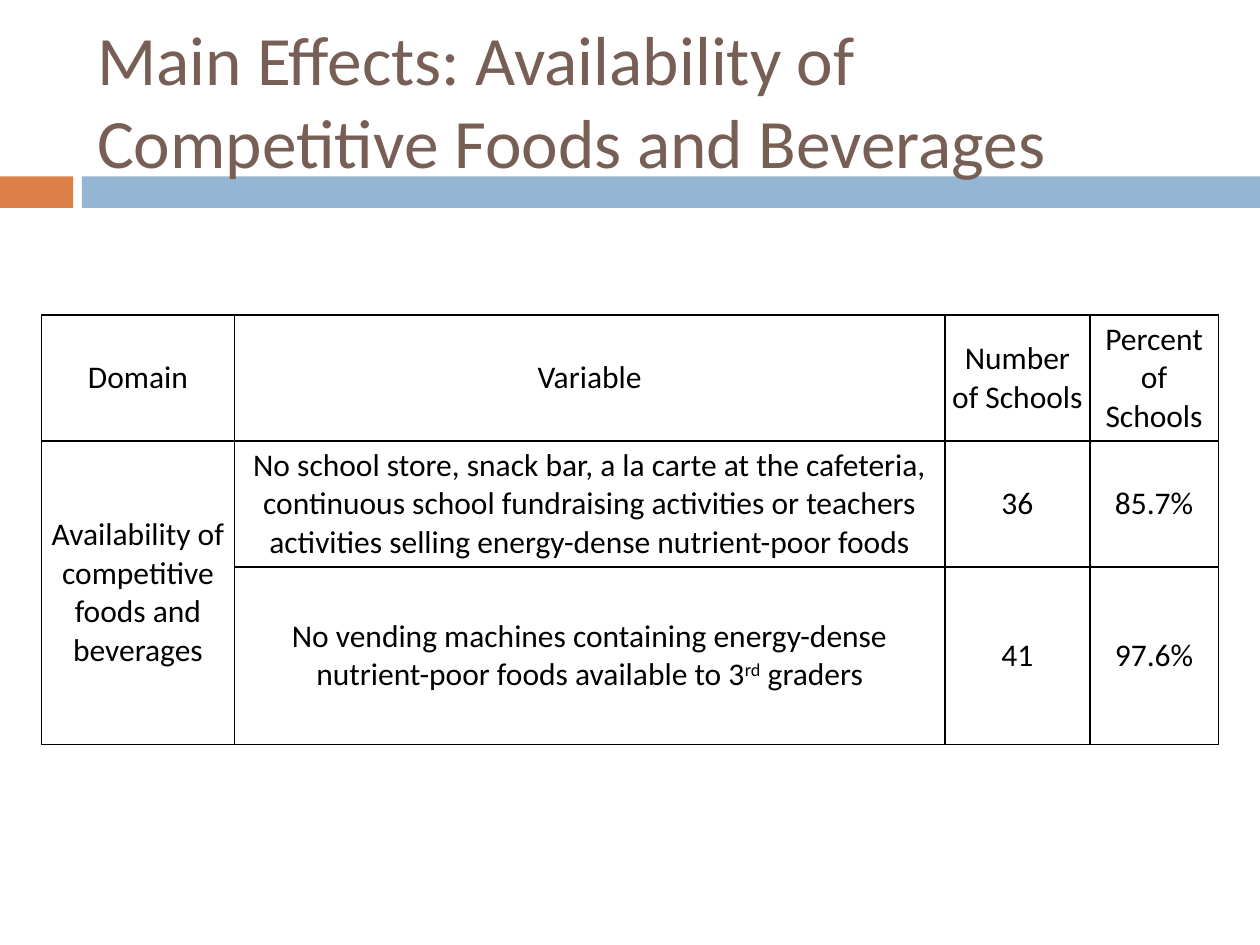
from pptx import Presentation
from pptx.dml.color import RGBColor
from pptx.enum.shapes import MSO_SHAPE
from pptx.enum.text import MSO_ANCHOR, MSO_AUTO_SIZE, PP_ALIGN
from pptx.oxml import parse_xml
from pptx.oxml.ns import nsdecls
from pptx.util import Inches, Pt

HEADS = ["Domain", "Variable", "Number of Schools", "Percent of Schools"]
ROWS = [
    ["Availability of competitive foods and beverages",
     "No school store, snack bar, a la carte at the cafeteria, continuous "
     "school fundraising activities or teachers activities selling "
     "energy-dense nutrient-poor foods", "36", "85.7%"],
    ["", "No vending machines containing energy-dense nutrient-poor foods "
     "available to 3^rd^ graders", "41", "97.6%"],
]
WIDTHS = [1.53, 5.64, 1.15, 1.02]
HEIGHTS = [1, 1, 1.41]


def color(code):
    return RGBColor.from_string(code)


class Deck:
    """Holds the style and the current slide."""

    face = "Calibri"
    ink = "000000"

    def __init__(self, slide):
        self.slide = slide

    def style(self, para, size, code, align):
        para.alignment = align
        para.font.name = self.face
        para.font.size = Pt(size)
        para.font.color.rgb = color(code)

    def bar(self, left, width, code):
        shape = self.slide.shapes.add_shape(
            MSO_SHAPE.RECTANGLE, Inches(left), Inches(1.4),
            Inches(width), Inches(0.25))
        shape.shadow.inherit = False
        shape.fill.solid()
        shape.fill.fore_color.rgb = color(code)
        shape.line.fill.background()

    def title(self, text):
        shape = self.slide.shapes.title
        shape.left, shape.top = Inches(0.67), Inches(0.25)
        shape.width, shape.height = Inches(8.92), Inches(1.08)
        frame = shape.text_frame
        frame.text = text
        frame.word_wrap = True
        frame.auto_size = MSO_AUTO_SIZE.NONE
        frame.vertical_anchor = MSO_ANCHOR.MIDDLE
        self.style(frame.paragraphs[0], 39.6, "775F55", PP_ALIGN.LEFT)
        shape.element.getparent().append(shape.element)

    def border(self, cell):
        props = cell._tc.get_or_add_tcPr()
        for side in "LRTB":
            props.append(parse_xml(
                f'<a:ln{side} {nsdecls("a")} w="{Pt(1)}"><a:solidFill>'
                f'<a:srgbClr val="{self.ink}"/></a:solidFill></a:ln{side}>'))

    def cell(self, cell, text):
        self.border(cell)
        cell.fill.background()
        cell.vertical_anchor = MSO_ANCHOR.MIDDLE
        cell.margin_left = cell.margin_right = Inches(0.05)
        cell.margin_top = cell.margin_bottom = 0
        para = cell.text_frame.paragraphs[0]
        for i, part in enumerate(text.split("^")):
            run = para.add_run()
            run.text = part
            if i % 2:
                run._r.get_or_add_rPr().set("baseline", "30000")
        self.style(para, 18, self.ink, PP_ALIGN.CENTER)

    def table(self, left, top, rows):
        table = self.slide.shapes.add_table(
            len(rows), len(WIDTHS), Inches(left), Inches(top),
            Inches(sum(WIDTHS)), Inches(sum(HEIGHTS))).table
        table.first_row = table.horz_banding = False
        for col, width in zip(table.columns, WIDTHS):
            col.width = Inches(width)
        for r, (row, height) in enumerate(zip(rows, HEIGHTS)):
            table.rows[r].height = Inches(height)
            for c, text in enumerate(row):
                self.cell(table.cell(r, c), text)
        table.cell(1, 0).merge(table.cell(2, 0))


def main():
    show = Presentation()
    show.slide_width, show.slide_height = Inches(10), Inches(7.5)
    deck = Deck(show.slides.add_slide(show.slide_layouts[5]))
    deck.bar(0, 0.58, "DD8047")
    deck.bar(0.65, 9.35, "94B6D2")
    deck.title("Main Effects: Availability of Competitive Foods and Beverages")
    deck.table(0.33, 2.5, [HEADS, *ROWS])
    show.save("out.pptx")


if __name__ == "__main__":
    main()
